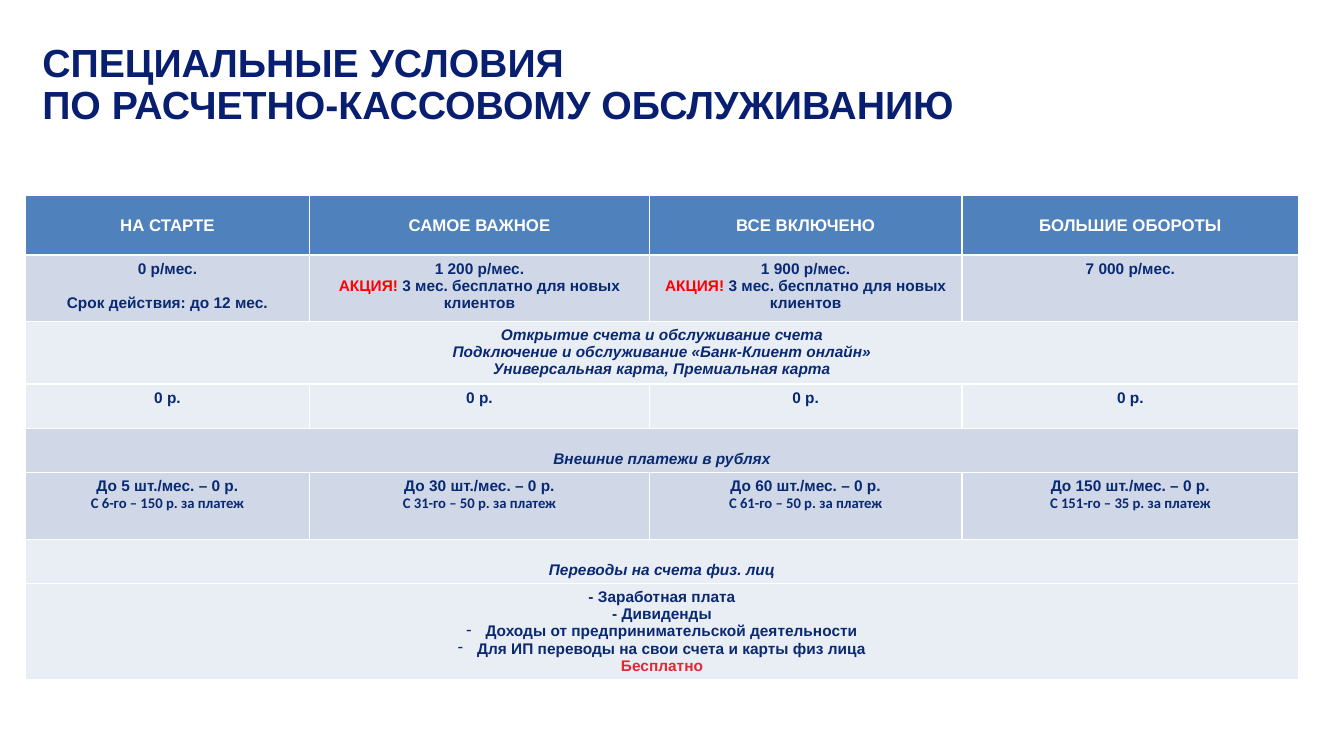
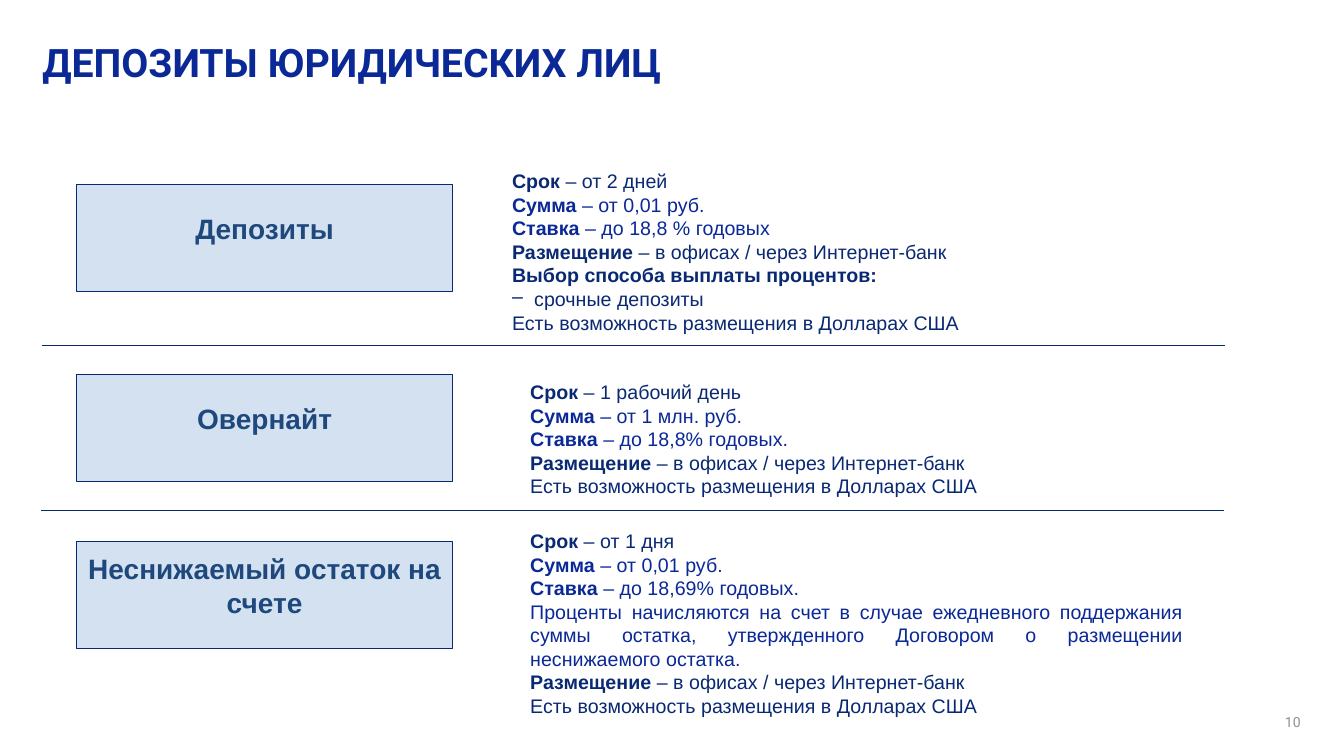
from dataclasses import dataclass
from functools import partial

from lxml.etree import SubElement
from pptx import Presentation
from pptx.dml.color import RGBColor as Color
from pptx.enum.shapes import MSO_CONNECTOR as Connector, MSO_SHAPE as Shape
from pptx.enum.text import MSO_ANCHOR as Anchor, MSO_AUTO_SIZE as AutoSize, PP_ALIGN as Align
from pptx.oxml.ns import qn
from pptx.util import Emu, Inches, Pt


@dataclass(frozen=True)
class Theme:
    navy: str = "0A2973"
    blue: str = "0A2896"
    title_navy: str = "081E70"
    label: str = "1F497D"
    white: str = "FFFFFF"
    gray: str = "909090"
    promo: str = "FF0000"
    free: str = "E62632"
    header: str = "4F81BD"
    dark_band: str = "D0D8E8"
    light_band: str = "E9EDF4"
    box: str = "D4E1F0"
    sans: str = "Arial"
    title_size: float = 28
    label_size: float = 20
    terms_size: float = 14
    header_size: float = 12
    cell_size: float = 11
    note_size: float = 10.5
    number_size: float = 10
    rule: float = 0.75


theme = Theme()


@dataclass
class Line:
    text: str
    lead: str = ""
    lead_color: str = ""
    color: str = theme.navy
    size: float = theme.cell_size
    font: str = theme.sans
    bold: bool = True
    italic: bool = False
    align: Align = Align.CENTER
    before: float = 0
    bullet: str = ""
    indent: float = 0


presentation = Presentation()
presentation.slide_width = Inches(13.33)
presentation.slide_height = Inches(7.5)
title_only = presentation.slide_layouts[5]


def place(*percents):
    sides = (presentation.slide_width, presentation.slide_height)
    return [Emu(round(sides[i % 2] * percent / 100)) for i, percent in enumerate(percents)]


def write(frame, lines):
    frame.word_wrap = True
    for number, line in enumerate(lines):
        paragraph = frame.add_paragraph() if number else frame.paragraphs[0]
        paragraph.text = line.lead or line.text
        if line.lead:
            lead = paragraph.runs[0]
            lead.font.bold = True
            if line.lead_color:
                lead.font.color.rgb = Color.from_string(line.lead_color)
            paragraph.add_run().text = line.text
        if line.bullet:
            properties = paragraph._p.get_or_add_pPr()
            properties.set("marL", str(Inches(line.indent)))
            properties.set("indent", str(-Inches(line.indent)))
            SubElement(properties, qn("a:buChar")).set("char", line.bullet)
        paragraph.alignment = line.align
        if line.before:
            paragraph.space_before = Pt(line.before)
        font = paragraph.font
        font.name, font.size = line.font, Pt(line.size)
        font.bold, font.italic = line.bold, line.italic
        font.color.rgb = Color.from_string(line.color)


Title = partial(Line, size=theme.title_size, align=Align.LEFT)
titles = [
    (Title("СПЕЦИАЛЬНЫЕ УСЛОВИЯ\nПО РАСЧЕТНО-КАССОВОМУ ОБСЛУЖИВАНИЮ", color=theme.title_navy), 70.59, 11.33),
    (Title("ДЕПОЗИТЫ ЮРИДИЧЕСКИХ ЛИЦ", color=theme.blue, font="Roboto"), 83.35, 5.6),
]
slides = []
for line, width, height in titles:
    slide = presentation.slides.add_slide(title_only)
    title = slide.shapes.title
    title.left, title.top, title.width, title.height = place(3.15, 5.73, width, height)
    frame = title.text_frame
    frame.margin_left = frame.margin_top = frame.margin_right = frame.margin_bottom = 0
    frame.vertical_anchor = Anchor.TOP
    frame.auto_size = AutoSize.NONE
    write(frame, [line])
    frame.paragraphs[0].line_spacing = 0.9
    slides.append(slide)
tariff_slide, deposit_slide = slides

Header = partial(Line, color=theme.white, size=theme.header_size)
Section = partial(Line, italic=True)
Note = partial(Line, font="Calibri", size=theme.note_size)
Dash = partial(Line, bullet="-", indent=0.19)
promo = Line(" 3 мес. бесплатно для новых клиентов", lead="АКЦИЯ!", lead_color=theme.promo)

tariffs = ["НА СТАРТЕ", "САМОЕ ВАЖНОЕ", "ВСЕ ВКЛЮЧЕНО", "БОЛЬШИЕ ОБОРОТЫ"]
payments = [("5", "6", "150"), ("30", "31", "50"), ("60", "61", "50"), ("150", "151", "35")]
rows = [
    (7.87, theme.header, Anchor.MIDDLE, [[Header(name)] for name in tariffs]),
    (8.8, theme.dark_band, Anchor.TOP, [
        [Line("0 р/мес."), Line("Срок действия: до 12 мес.", before=12.5)],
        [Line("1 200 р/мес."), promo],
        [Line("1 900 р/мес."), promo],
        [Line("7 000 р/мес.")],
    ]),
    (8.27, theme.light_band, Anchor.TOP, [[
        Section("Открытие счета и обслуживание счета"),
        Section("Подключение и обслуживание «Банк-Клиент онлайн»"),
        Section("Универсальная карта, Премиальная карта"),
    ]]),
    (5.87, theme.light_band, Anchor.TOP, [[Line("0 р.")] for name in tariffs]),
    (5.87, theme.dark_band, Anchor.BOTTOM, [[Section("Внешние платежи в рублях")]]),
    (8.8, theme.dark_band, Anchor.TOP, [
        [Line(f"До {limit} шт./мес. – 0 р."), Note(f"С {start}-го – {price} р. за платеж")]
        for limit, start, price in payments
    ]),
    (5.87, theme.light_band, Anchor.BOTTOM, [[Section("Переводы на счета физ. лиц")]]),
    (12.67, theme.light_band, Anchor.TOP, [[
        Line("- Заработная плата"),
        Line("- Дивиденды"),
        Dash("Доходы от предпринимательской деятельности"),
        Dash("Для ИП переводы на свои счета и карты физ лица"),
        Line("Бесплатно", color=theme.free),
    ]]),
]
columns = [21.16, 25.28, 23.26, 25.06]
heights = [row[0] for row in rows]
table = tariff_slide.shapes.add_table(
    len(rows), len(columns), *place(1.88, 25.87, sum(columns), sum(heights))
).table
table.horz_banding = False
for column, share in zip(table.columns, columns):
    column.width = place(share)[0]
for index, (height, fill, anchor, cells) in enumerate(rows):
    table.rows[index].height = place(0, height)[1]
    for column in range(len(columns)):
        cell = table.cell(index, column)
        cell.fill.solid()
        cell.fill.fore_color.rgb = Color.from_string(fill)
    if len(cells) == 1:
        table.cell(index, 0).merge(table.cell(index, len(columns) - 1))
    for column, lines in enumerate(cells):
        cell = table.cell(index, column)
        cell.vertical_anchor = anchor
        write(cell.text_frame, lines)

Term = partial(Line, size=theme.terms_size, bold=False, align=Align.JUSTIFY)
BlueTerm = partial(Term, color=theme.blue)
placement = Term(" – в офисах / через Интернет-банк", lead="Размещение")
dollars = Term("Есть возможность размещения в Долларах США")
products = [
    ("Депозиты", 24.4, (37.36, 21.73, 50.04, 23.33), [
        Term(" – от 2 дней", lead="Срок"),
        BlueTerm(" – от 0,01 руб.", lead="Сумма"),
        BlueTerm(" – до 18,8 % годовых", lead="Ставка"),
        placement,
        Term("Выбор способа выплаты процентов:", bold=True),
        Term("срочные депозиты", bullet="–", indent=0.22, align=Align.LEFT),
        dollars,
    ]),
    ("Овернайт", 49.6, (38.71, 49.6, 50.04, 17.07), [
        Term(" – 1 рабочий день", lead="Срок"),
        BlueTerm(" – от 1 млн. руб.", lead="Сумма"),
        BlueTerm(" – до 18,8% годовых.", lead="Ставка"),
        placement,
        dollars,
    ]),
    ("Неснижаемый остаток на счете", 71.6, (38.71, 69.33, 50.04, 26.53), [
        Term(" – от 1 дня", lead="Срок"),
        BlueTerm(" – от 0,01 руб.", lead="Сумма"),
        BlueTerm(" – до 18,69% годовых.", lead="Ставка"),
        BlueTerm("Проценты начисляются на счет в случае ежедневного поддержания суммы остатка, "
                 "утвержденного Договором о размещении неснижаемого остатка."),
        placement,
        dollars,
    ]),
]
for name, top, terms_area, terms in products:
    box = deposit_slide.shapes.add_shape(Shape.RECTANGLE, *place(5.7, top, 27.98, 14.13))
    box.shadow.inherit = False
    box.fill.solid()
    box.fill.fore_color.rgb = Color.from_string(theme.box)
    box.line.color.rgb = Color.from_string(theme.navy)
    box.line.width = Pt(theme.rule)
    box.text_frame.vertical_anchor = Anchor.MIDDLE
    box.text_frame.margin_bottom = Inches(0.24)
    write(box.text_frame, [Line(name, color=theme.label, size=theme.label_size)])
    write(deposit_slide.shapes.add_textbox(*place(*terms_area)).text_frame, terms)

for left, top in [(3.15, 45.73), (3.08, 67.47)]:
    divider = deposit_slide.shapes.add_connector(
        Connector.STRAIGHT, *place(left, top, left + 88, top)
    )
    divider.line.color.rgb = Color.from_string(theme.navy)
    divider.line.width = Pt(theme.rule)
    SubElement(divider._element.spPr, qn("a:effectLst"))

number_frame = deposit_slide.shapes.add_textbox(*place(74.94, 94.4, 21.83, 5.6)).text_frame
number_frame.margin_top = number_frame.margin_right = 0
write(number_frame, [
    Line("10", color=theme.gray, size=theme.number_size, font="Roboto", bold=False, align=Align.RIGHT)
])

presentation.save("out.pptx")
